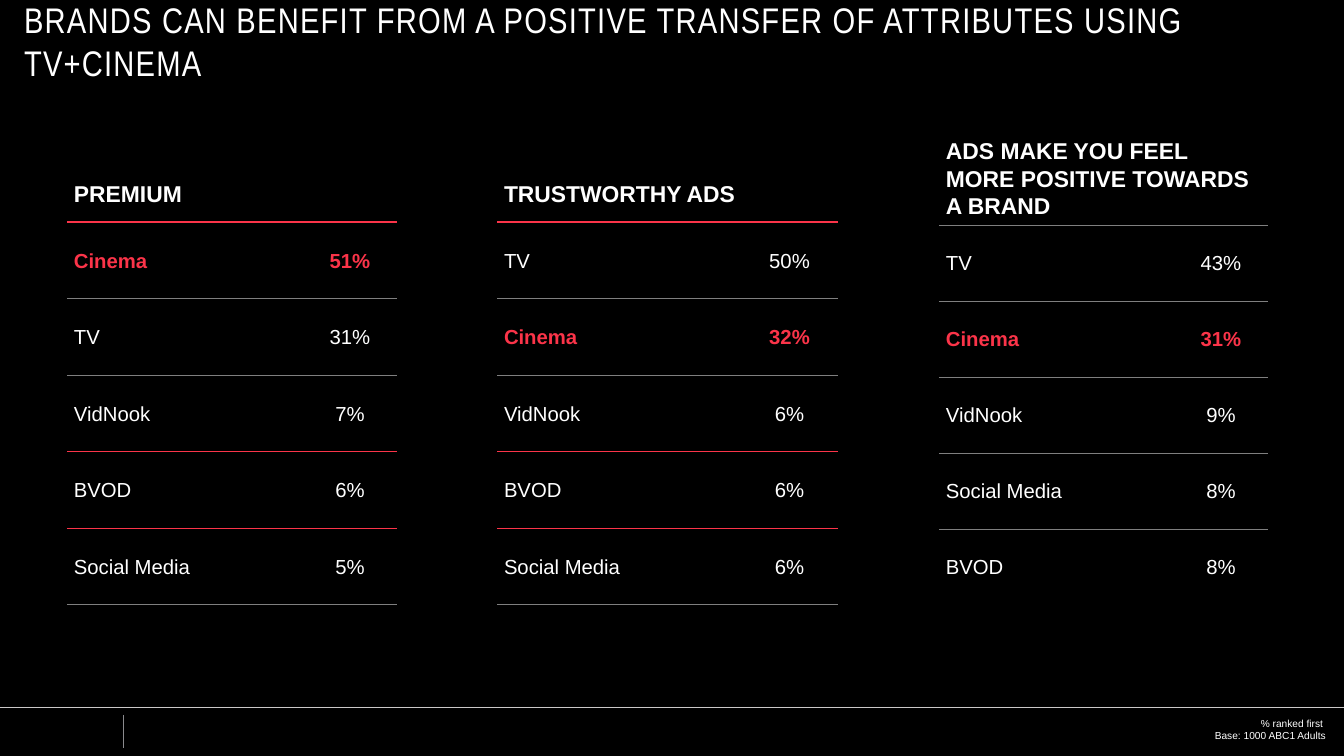
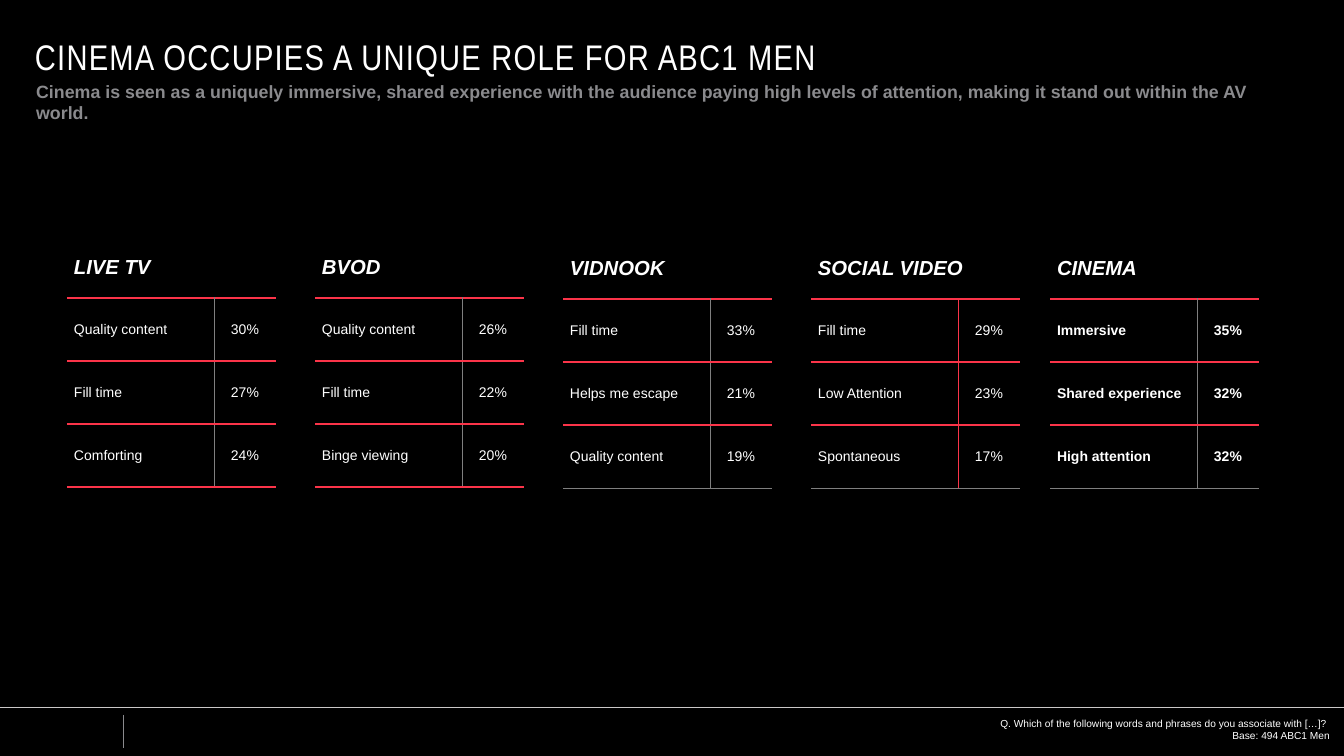
"""Build two slides of ranked media tables on a shared black page with a ruled footer."""
from dataclasses import dataclass

from lxml.etree import SubElement
from pptx import Presentation
from pptx.dml.color import RGBColor
from pptx.enum.shapes import MSO_CONNECTOR
from pptx.enum.text import MSO_ANCHOR, MSO_AUTO_SIZE, PP_ALIGN
from pptx.oxml.ns import qn
from pptx.util import Emu, Pt

EMU_PER_PX = 10000
PAGE_WIDTH, PAGE_HEIGHT = 1344, 756
TITLE_ONLY, TITLE_AND_BODY = 5, 1

BLACK = RGBColor(0x00, 0x00, 0x00)
WHITE = RGBColor(0xFF, 0xFF, 0xFF)
RED = RGBColor(0xFB, 0x34, 0x49)
GREY = RGBColor(0x8A, 0x8A, 0x8D)
PALE_GREY = RGBColor(0xCA, 0xC8, 0xC8)
RULE_GREY = RGBColor(0x7F, 0x7F, 0x7F)

BODY_FONT, TITLE_FONT = "Arial", "Arial Narrow"


@dataclass(frozen=True)
class Rule:
    """Colour and width in points of a line."""
    color: RGBColor
    width: float


@dataclass(frozen=True)
class TextStyle:
    """Look of a run of text."""
    size: int
    color: RGBColor = WHITE
    bold: bool = False
    italic: bool = False
    font: str = BODY_FONT


@dataclass(frozen=True)
class RankStyle:
    """Text styles of the tables on one slide."""
    header: TextStyle
    entry: TextStyle
    highlight: TextStyle


@dataclass(frozen=True)
class Ranking:
    """One ranked table; rules run from below the header downwards."""
    heading: str
    left: int
    top: int
    columns: tuple[int, int]
    header_height: int
    body_height: int
    entries: tuple[tuple[str, int], ...]
    rules: tuple[Rule | None, ...]
    divider: Rule | None = None
    highlighted: tuple[str, ...] = ()


THIN_RED = Rule(RED, 1)
THICK_RED = Rule(RED, 1.5)
THIN_GREY = Rule(RULE_GREY, 0.75)
RED_DIVIDER = Rule(RED, 0.75)

TITLE = TextStyle(28, font=TITLE_FONT)
SUBTITLE = TextStyle(14, GREY, bold=True)
FOOTNOTE = TextStyle(8)

ATTRIBUTE_STYLE = RankStyle(TextStyle(18, bold=True), TextStyle(16), TextStyle(16, RED, bold=True))
ROLE_STYLE = RankStyle(TextStyle(16, bold=True, italic=True), TextStyle(11), TextStyle(11, bold=True))

MIXED_RULES = (THIN_RED, THIN_GREY, THIN_GREY, THIN_RED, THIN_RED, THIN_GREY)
ATTRIBUTES = (
    Ranking("PREMIUM", 67, 166, (236, 94), 56, 383,
            (("Cinema", 51), ("TV", 31), ("VidNook", 7), ("BVOD", 6), ("Social Media", 5)),
            MIXED_RULES, highlighted=("Cinema",)),
    Ranking("TRUSTWORTHY ADS", 497, 166, (244, 97), 56, 383,
            (("TV", 50), ("Cinema", 32), ("VidNook", 6), ("BVOD", 6), ("Social Media", 6)),
            MIXED_RULES, highlighted=("Cinema",)),
    Ranking("ADS MAKE YOU FEEL MORE POSITIVE TOWARDS A BRAND", 939, 132, (235, 94), 93, 380,
            (("TV", 43), ("Cinema", 31), ("VidNook", 9), ("Social Media", 8), ("BVOD", 8)),
            (THIN_GREY,) * 5 + (None,), highlighted=("Cinema",)),
)

ROLE_COLUMNS = (147, 62)
ROLE_HEADER, ROLE_BODY = 62, 189
ALL_RED = (THIN_RED,) + (THICK_RED,) * 3
GREY_ENDED = (THICK_RED,) * 3 + (THIN_GREY,)


def role(heading: str, left: int, top: int, entries: tuple[tuple[str, int], ...],
         rules: tuple[Rule | None, ...], divider: Rule = THIN_GREY,
         highlighted: tuple[str, ...] = ()) -> Ranking:
    """Return a ranking of the common size used for media roles."""
    return Ranking(heading, left, top, ROLE_COLUMNS, ROLE_HEADER, ROLE_BODY,
                   entries, rules, divider, highlighted)


ROLES = (
    role("LIVE TV", 67, 236,
         (("Quality content", 30), ("Fill time", 27), ("Comforting", 24)), ALL_RED),
    role("BVOD", 315, 236,
         (("Quality content", 26), ("Fill time", 22), ("Binge viewing", 20)), ALL_RED),
    role("VIDNOOK", 563, 237,
         (("Fill time", 33), ("Helps me escape", 21), ("Quality content", 19)), GREY_ENDED),
    role("SOCIAL VIDEO", 811, 237,
         (("Fill time", 29), ("Low Attention", 23), ("Spontaneous", 17)), GREY_ENDED, RED_DIVIDER),
    role("CINEMA", 1050, 237,
         (("Immersive", 35), ("Shared experience", 32), ("High attention", 32)), GREY_ENDED,
         highlighted=("Immersive", "Shared experience", "High attention")),
)


def px(length: int) -> Emu:
    """Convert pixels to EMU."""
    return Emu(length * EMU_PER_PX)


def style_runs(paragraph, style: TextStyle) -> None:
    """Apply a text style to every run of a paragraph."""
    for run in paragraph.runs:
        run.font.name = style.font
        run.font.size = Pt(style.size)
        run.font.bold = style.bold
        run.font.italic = style.italic
        run.font.color.rgb = style.color


def place(shape, left: int, top: int, width: int, height: int) -> None:
    """Move and size a shape."""
    shape.left, shape.top, shape.width, shape.height = map(px, (left, top, width, height))


def clear_margins(frame) -> None:
    """Remove the insets of a text frame."""
    frame.margin_left = frame.margin_top = frame.margin_right = frame.margin_bottom = 0


def set_title(slide, text: str, left: int, top: int) -> None:
    """Fill the title placeholder with letter-spaced text."""
    title = slide.shapes.title
    place(title, left, top, 1242, 41)
    frame = title.text_frame
    frame.text = text
    clear_margins(frame)
    frame.word_wrap = True
    frame.auto_size = MSO_AUTO_SIZE.NONE
    frame.vertical_anchor = MSO_ANCHOR.MIDDLE
    heading = frame.paragraphs[0]
    heading.alignment = PP_ALIGN.LEFT
    style_runs(heading, TITLE)
    for run in heading.runs:
        run.font._element.set("spc", "100")


def set_subtitle(slide, text: str) -> None:
    """Fill the body placeholder with a line that has no bullet."""
    body = slide.placeholders[1]
    place(body, 27, 76, 1242, 44)
    frame = body.text_frame
    frame.text = text
    frame.auto_size = MSO_AUTO_SIZE.NONE
    sentence = frame.paragraphs[0]
    properties = sentence._p.get_or_add_pPr()
    properties.set("marL", "0")
    properties.set("indent", "0")
    SubElement(properties, qn("a:buNone"))
    sentence.line_spacing = Pt(16.8)
    sentence.space_before = Pt(0)
    style_runs(sentence, SUBTITLE)


def add_line(slide, start: tuple[int, int], end: tuple[int, int], rule: Rule) -> None:
    """Draw a straight line without a shadow."""
    line = slide.shapes.add_connector(MSO_CONNECTOR.STRAIGHT, *map(px, start + end))
    line.line.color.rgb = rule.color
    line.line.width = Pt(rule.width)
    SubElement(line._element.spPr, qn("a:effectLst"))


def add_footer(slide, notes: tuple[str, ...], left: int) -> None:
    """Draw the footer rules and the right-aligned source notes."""
    add_line(slide, (123, 715), (123, 748), Rule(GREY, 0.75))
    add_line(slide, (0, 707), (PAGE_WIDTH, 707), Rule(PALE_GREY, 0.5))
    footer = slide.shapes.add_textbox(*map(px, (left, 717, 776, 25)))
    frame = footer.text_frame
    frame.word_wrap = True
    clear_margins(frame)
    frame.text = "\n".join(notes)
    for note in frame.paragraphs:
        note.alignment = PP_ALIGN.RIGHT
        style_runs(note, FOOTNOTE)


def set_borders(cell, left: Rule | None, right: Rule | None,
                top: Rule | None, bottom: Rule | None) -> None:
    """Set the four borders of a cell and leave it unfilled."""
    properties = cell._tc.get_or_add_tcPr()
    for tag, rule in (("a:lnL", left), ("a:lnR", right), ("a:lnT", top), ("a:lnB", bottom)):
        border = SubElement(properties, qn(tag))
        if rule is None:
            border.set("w", "0")
            SubElement(border, qn("a:noFill"))
        else:
            border.set("w", str(Pt(rule.width)))
            fill = SubElement(border, qn("a:solidFill"))
            SubElement(fill, qn("a:srgbClr")).set("val", str(rule.color))
    cell.fill.background()


def fill_cell(cell, text: str, style: TextStyle, alignment: PP_ALIGN) -> None:
    """Write styled text into a cell."""
    cell.margin_left = cell.margin_right = px(7)
    cell.margin_top = cell.margin_bottom = 0
    cell.vertical_anchor = MSO_ANCHOR.MIDDLE
    cell.text_frame.text = text
    paragraph = cell.text_frame.paragraphs[0]
    paragraph.alignment = alignment
    paragraph.line_spacing = 1.07
    style_runs(paragraph, style)


def add_ranking(slide, ranking: Ranking, style: RankStyle) -> None:
    """Draw one ranked table with its rules."""
    row_count = len(ranking.entries) + 1
    table = slide.shapes.add_table(
        row_count, 2, px(ranking.left), px(ranking.top), px(sum(ranking.columns)),
        px(ranking.header_height + ranking.body_height)).table
    table.first_row = table.horz_banding = False
    for column, width in zip(table.columns, ranking.columns):
        column.width = px(width)
    for index, row in enumerate(table.rows):
        row.height = (px(ranking.body_height) // len(ranking.entries) if index
                      else px(ranking.header_height))
        above = ranking.rules[index - 1] if index else None
        divider = ranking.divider if index else None
        set_borders(table.cell(index, 0), None, divider, above, ranking.rules[index])
        set_borders(table.cell(index, 1), divider, None, above, ranking.rules[index])

    table.cell(0, 0).merge(table.cell(0, 1))
    fill_cell(table.cell(0, 0), ranking.heading, style.header, PP_ALIGN.LEFT)
    for index, (label, share) in enumerate(ranking.entries, start=1):
        entry_style = style.highlight if label in ranking.highlighted else style.entry
        fill_cell(table.cell(index, 0), label, entry_style, PP_ALIGN.LEFT)
        fill_cell(table.cell(index, 1), f"{share}%", entry_style, PP_ALIGN.CENTER)


def build_attributes(presentation) -> None:
    """Build the slide on transfer of attributes."""
    slide = presentation.slides.add_slide(presentation.slide_layouts[TITLE_ONLY])
    set_title(slide, "BRANDS CAN BENEFIT FROM A POSITIVE TRANSFER OF ATTRIBUTES USING TV+CINEMA", 24, 20)
    add_footer(slide, ("% ranked first ", "Base: 1000 ABC1 Adults"), 550)
    for ranking in ATTRIBUTES:
        add_ranking(slide, ranking, ATTRIBUTE_STYLE)


def build_roles(presentation) -> None:
    """Build the slide on the role of each medium."""
    slide = presentation.slides.add_slide(presentation.slide_layouts[TITLE_AND_BODY])
    set_title(slide, "CINEMA OCCUPIES A UNIQUE ROLE FOR ABC1 MEN", 35, 36)
    set_subtitle(slide, "Cinema is seen as a uniquely immersive, shared experience with the audience "
                        "paying high levels of attention, making it stand out within the AV world.")
    add_footer(slide, ("Q. Which of the following words and phrases do you associate with […]? ",
                       "Base: 494 ABC1 Men"), 554)
    for ranking in ROLES:
        add_ranking(slide, ranking, ROLE_STYLE)


def main() -> None:
    """Create and save the presentation."""
    presentation = Presentation()
    presentation.slide_width, presentation.slide_height = px(PAGE_WIDTH), px(PAGE_HEIGHT)
    backdrop = presentation.slide_master.background.fill
    backdrop.solid()
    backdrop.fore_color.rgb = BLACK
    build_attributes(presentation)
    build_roles(presentation)
    presentation.save("out.pptx")


if __name__ == "__main__":
    main()
